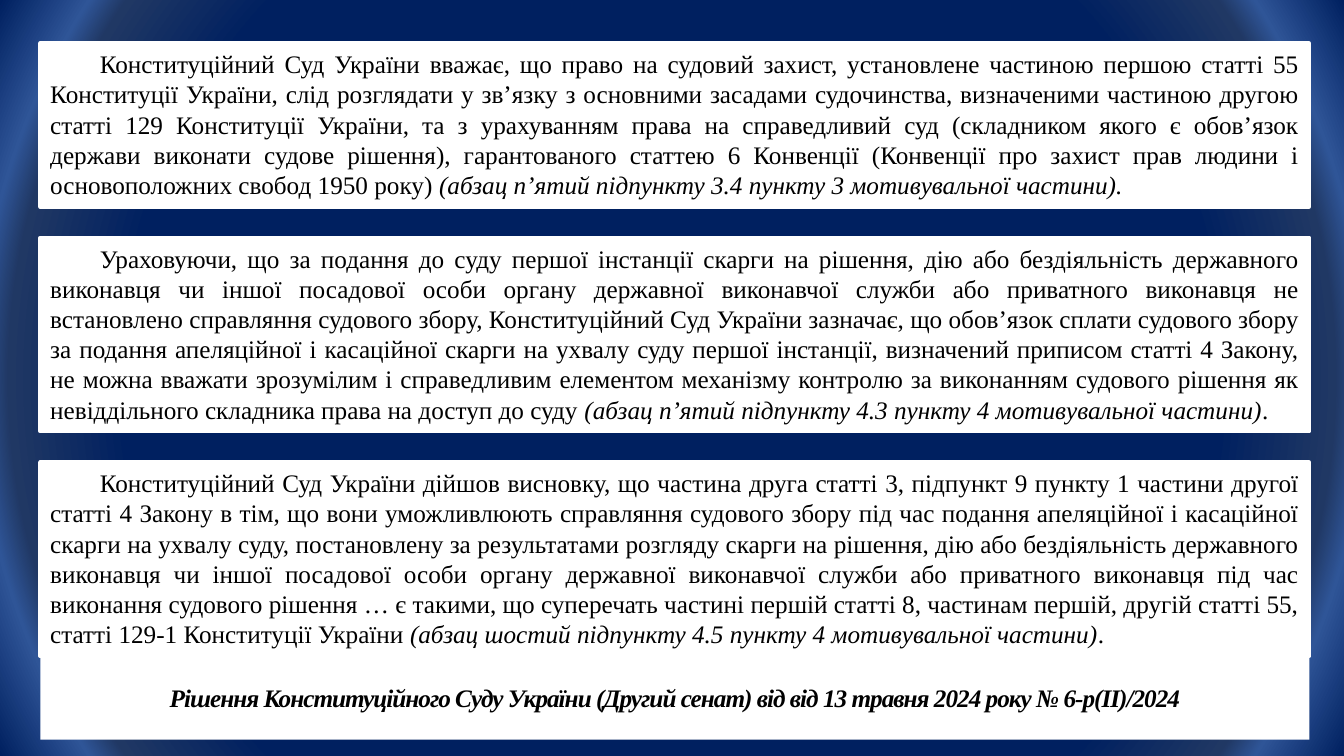
from pptx import Presentation
from pptx.dml.color import RGBColor
from pptx.enum import text
from pptx.oxml import parse_xml
from pptx.oxml.ns import nsdecls
from pptx.util import Pt

WHITE = RGBColor(0xFF, 0xFF, 0xFF)
BLACK = RGBColor(0, 0, 0)
NAVY = RGBColor(0x00, 0x20, 0x60)
SLATE = RGBColor(0x20, 0x38, 0x64)
BLUE = RGBColor(0x2F, 0x55, 0x97)
GLOW = [(71, NAVY), (86, SLATE), (90, BLUE), (100, NAVY)]

FONT = "Times New Roman"
LEFT, WIDTH = 28.8, 906.5
TOP, GAP = 31, 22.3

# Each card: height, then its (wording, italic) runs
CARDS = [
    (116.6, [
        ("Конституційний Суд України вважає, що право на судовий захист, "
         "установлене частиною першою статті 55 Конституції України, слід "
         "розглядати у зв’язку з основними засадами судочинства, визначеними "
         "частиною другою статті 129 Конституції України, та з урахуванням "
         "права на справедливий суд (складником якого є обов’язок держави "
         "виконати судове рішення), гарантованого статтею 6 Конвенції "
         "(Конвенції про захист прав людини і основоположних свобод 1950 року) ",
         False),
        ("(абзац п’ятий підпункту 3.4 пункту 3 мотивувальної частини).", True),
    ]),
    (138.2, [
        ("Ураховуючи, що за подання до суду першої інстанції скарги на рішення, "
         "дію або бездіяльність державного виконавця чи іншої посадової особи "
         "органу державної виконавчої служби або приватного виконавця не "
         "встановлено справляння судового збору, Конституційний Суд України "
         "зазначає, що обов’язок сплати судового збору за подання апеляційної "
         "і касаційної скарги на ухвалу суду першої інстанції, визначений "
         "приписом статті 4 Закону, не можна вважати зрозумілим і справедливим "
         "елементом механізму контролю за виконанням судового рішення як "
         "невіддільного складника права на доступ до суду ", False),
        ("(абзац п’ятий підпункту 4.3 пункту 4 мотивувальної частини)", True),
        (".", False),
    ]),
    (138.2, [
        ("Конституційний Суд України дійшов висновку, що частина друга статті 3, "
         "підпункт 9 пункту 1 частини другої статті 4 Закону в тім, що вони "
         "уможливлюють справляння судового збору під час подання апеляційної "
         "і касаційної скарги на ухвалу суду, постановлену за результатами "
         "розгляду скарги на рішення, дію або бездіяльність державного "
         "виконавця чи іншої посадової особи органу державної виконавчої служби "
         "або приватного виконавця під час виконання судового рішення … є "
         "такими, що суперечать частині першій статті 8, частинам першій, "
         "другій статті 55, статті 129-1 Конституції України ", False),
        ("(абзац шостий підпункту 4.5 пункту 4 мотивувальної частини)", True),
        (".", False),
    ]),
]
RULING = ("Рішення Конституційного Суду України (Другий сенат) "
          "від від 13 травня 2024 року № 6-р(II)/2024")


def paint(slide):
    """Fill the background with a circular gradient."""
    fill = slide.background.fill
    fill.solid()
    stops = "".join(
        f'<a:gs pos="{pos * 1000}"><a:srgbClr val="{color}"/></a:gs>'
        for pos, color in GLOW)
    grad = parse_xml(
        f'<a:gradFill {nsdecls("a")} rotWithShape="1"><a:gsLst>{stops}</a:gsLst>'
        '<a:path path="circle"><a:fillToRect l="50000" t="50000" r="50000" '
        'b="50000"/></a:path></a:gradFill>')
    props = slide.background._cSld.bg.bgPr
    props.replace(props[0], grad)


def setup(box, align):
    """Give a box its white fill and return its first paragraph."""
    box.fill.solid()
    box.fill.fore_color.rgb = WHITE
    frame = box.text_frame
    frame.word_wrap = True
    frame.auto_size = text.MSO_AUTO_SIZE.SHAPE_TO_FIT_TEXT
    para = frame.paragraphs[0]
    para.alignment = align
    return para


def add_run(para, words, italic, bold=False):
    run = para.add_run()
    run.text = words
    font = run.font
    font.name, font.size = FONT, Pt(18)
    font.bold, font.italic = bold, italic
    font.color.rgb = BLACK
    return run


def add_card(slide, top, height, runs):
    box = slide.shapes.add_textbox(Pt(LEFT), Pt(top), Pt(WIDTH), Pt(height))
    box.line.color.rgb = WHITE
    box.line.width = Pt(3)
    para = setup(box, text.PP_ALIGN.JUSTIFY)
    para._p.get_or_add_pPr().set("indent", str(Pt(35.4)))
    for words, italic in runs:
        add_run(para, words, italic)


def add_title(slide):
    title = slide.shapes.title
    title.left, title.top = Pt(LEFT), Pt(483.8)
    title.width, title.height = Pt(WIDTH), Pt(29)
    para = setup(title, text.PP_ALIGN.CENTER)
    run = add_run(para, RULING, italic=True, bold=True)
    run.font._element.set("spc", "-70")


def main():
    deck = Presentation()
    deck.slide_width, deck.slide_height = Pt(960), Pt(540)
    slide = deck.slides.add_slide(deck.slide_layouts[5])
    paint(slide)

    # Ruling at the foot
    add_title(slide)

    # Stacked quotations
    top = TOP
    for height, runs in CARDS:
        add_card(slide, top, height, runs)
        top += height + GAP

    deck.save("out.pptx")


if __name__ == "__main__":
    main()
